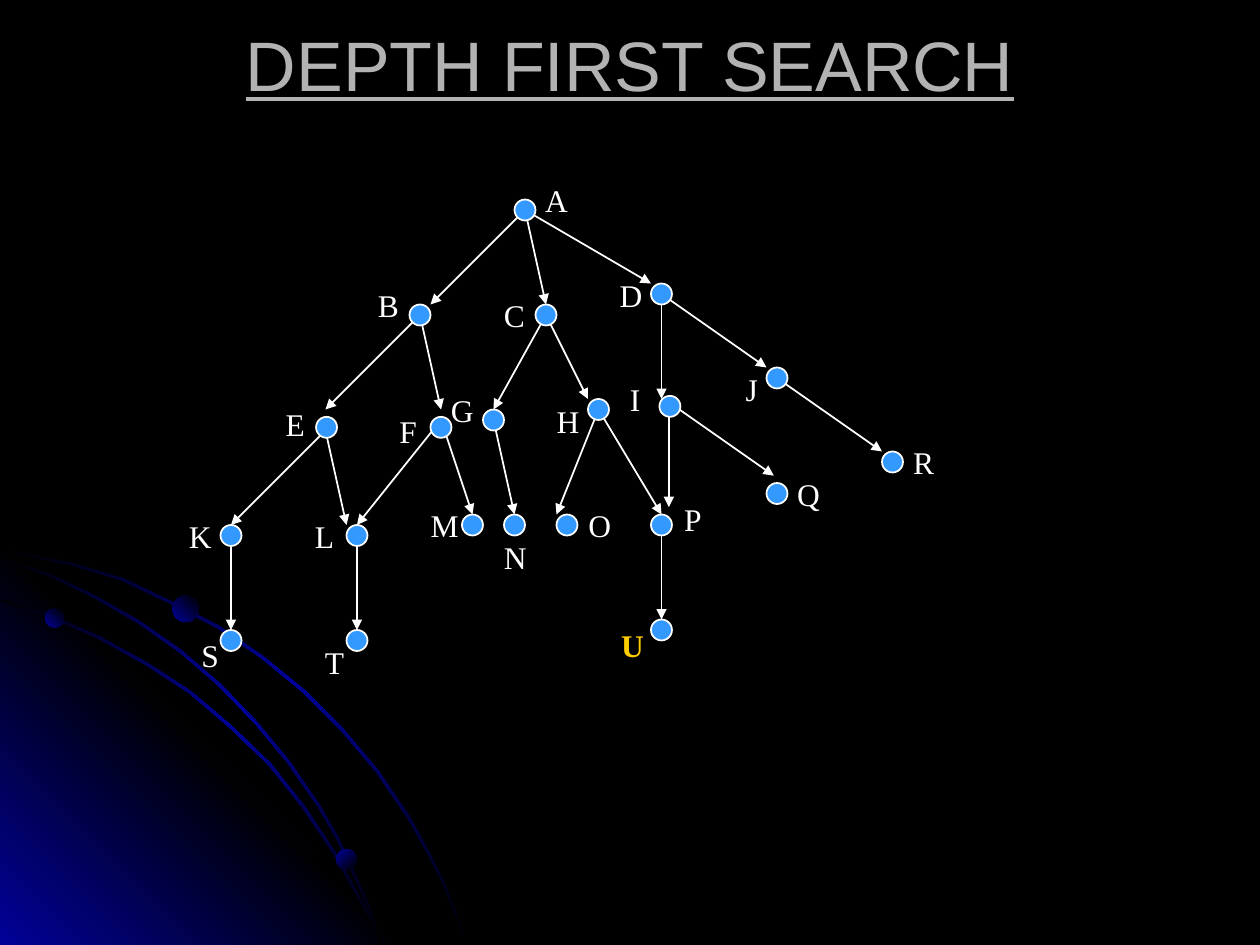
from copy import deepcopy

from lxml.etree import SubElement
from pptx import Presentation
from pptx.dml.color import RGBColor
from pptx.enum.shapes import MSO_CONNECTOR, MSO_SHAPE
from pptx.enum.text import MSO_ANCHOR, MSO_AUTO_SIZE, PP_ALIGN
from pptx.oxml.ns import qn
from pptx.util import Cm, Pt

BLACK, WHITE, BLUE = "000000", "FFFFFF", "010199"
NODE_BLUE, GOAL_GOLD, TITLE_GREY = "3399FF", "FFCC00", "B2B2B2"
GRID = 2.54 / 12  # the tree sits on a grid of twelfths of an inch
NODE_SIZE = 2 * GRID
SLIDE_HEIGHT = 19.05
ARC_WIDTH = 0.04

# Outer edges of the background arcs, in cm
OUTER_ARC = [(0, 11.05), (0.71, 11.2), (1.45, 11.35), (2.49, 11.66), (3.45, 12.12),
             (4.42, 12.62), (5.31, 13.23), (6.15, 13.92), (6.91, 14.68), (7.62, 15.52),
             (8.26, 16.46), (8.61, 17.09), (8.94, 17.73), (9.19, 18.36), (9.45, 19.02)]
INNER_ARC = [(0, 12.07), (1.04, 12.4), (2.01, 12.83), (2.97, 13.36), (3.86, 13.94),
             (4.67, 14.63), (5.46, 15.39), (6.15, 16.26), (6.76, 17.17), (7.26, 18.08),
             (7.52, 18.54), (7.7, 19.02)]
MIDDLE_ARC = [(0, 11.23), (0.99, 11.56), (1.93, 12.01), (2.82, 12.52), (3.66, 13.11),
              (4.45, 13.79), (5.18, 14.55), (5.82, 15.32), (6.45, 16.23), (6.83, 16.89),
              (7.16, 17.6), (7.47, 18.29), (7.7, 19.02)]
CORNER_GLOW = [(0, 10.85), (8.18, SLIDE_HEIGHT), (0, SLIDE_HEIGHT)]

# Background planets: left, top, size in cm, gradient angle
PLANETS = [(0.91, 12.27, 0.38, 45), (6.78, 17.12, 0.41, 315), (3.48, 12.01, 0.53, 45)]

# Node: centre on the grid, then left, top and width of its label in cm
NODES = {
    "A": (50, 20, 10.74, 3.53, 0.94),
    "B": (40, 30, 7.37, 5.64, 0.91),
    "C": (52, 30, 9.91, 5.84, 0.91),
    "D": (63, 28, 12.24, 5.44, 0.99),
    "E": (31.1, 40.7, 5.51, 8.05, 0.94),
    "F": (42, 40.7, 7.8, 8.18, 0.86),
    "G": (47, 40, 8.84, 7.75, 0.99),
    "H": (57, 39, 10.97, 7.98, 0.99),
    "I": (63.8, 38.7, 12.45, 7.54, 0.74),
    "J": (74, 36, 14.78, 7.34, 0.71),
    "K": (22, 51, 3.56, 10.29, 0.99),
    "L": (34, 51, 6.1, 10.29, 0.86),
    "M": (45, 50, 8.43, 10.08, 1.04),
    "N": (49, 50, 9.91, 10.72, 0.99),
    "O": (54, 50, 11.61, 10.08, 1.02),
    "P": (63, 50, 13.54, 9.96, 0.86),
    "Q": (74, 47, 15.82, 9.45, 0.99),
    "R": (85, 44, 18.16, 8.81, 0.91),
    "S": (22, 61, 3.81, 12.7, 0.81),
    "T": (34, 61, 6.3, 12.83, 0.91),
    "U": (63, 60, 12.27, 12.5, 0.99),
}
GOAL = "U"

# Branches: start on the grid, then the arrow tips
BRANCHES = [
    ((50, 20), [(41, 29), (52, 29), (62, 27)]),
    ((40, 30), [(31, 39), (42, 39)]),
    ((52, 30), [(47, 39), (56, 38)]),
    ((31, 41), [(22, 50), (33, 50)]),
    ((42, 40), [(34, 50), (45, 49)]),
    ((57, 39), [(53, 49), (63, 49)]),
    ((47, 40), [(49, 49)]),
    ((34, 51), [(34, 60)]),
    ((22, 51), [(22, 60)]),
    ((63, 28), [(63, 38), (73, 35)]),
    ((63.7, 38.3), [(63.7, 48.3), (73.7, 45.3)]),
    ((74, 36), [(84, 43)]),
    ((63, 50), [(63, 59)]),
]


def color(hex_value):
    return RGBColor.from_string(hex_value)


def paint_gradient(shape, colors, angle):
    """Spread the colours evenly along a counter-clockwise angle."""
    shape.shadow.inherit = False
    shape.line.fill.background()
    fill = shape.fill
    fill.gradient()
    fill.gradient_angle = angle
    stops = shape._element.spPr.find(".//" + qn("a:gsLst"))
    while len(stops) < len(colors):
        stops.append(deepcopy(stops[0]))
    for index, (stop, hex_value) in enumerate(zip(fill.gradient_stops, colors)):
        stop.position = index / (len(colors) - 1)
        stop.color.rgb = color(hex_value)


def add_outline(slide, points, colors, angle):
    corners = [(Cm(x), Cm(y)) for x, y in points]
    builder = slide.shapes.build_freeform(*corners[0])
    builder.add_line_segments(corners[1:], close=True)
    paint_gradient(builder.convert_to_shape(), colors, angle)


def add_arc(slide, outer_edge):
    inner_edge = [(max(x - ARC_WIDTH, 0), min(y + ARC_WIDTH, SLIDE_HEIGHT))
                  for x, y in reversed(outer_edge)]
    add_outline(slide, outer_edge + inner_edge, [BLACK, BLUE, BLACK], 315)


def add_planet(slide, left, top, size, angle):
    planet = slide.shapes.add_shape(MSO_SHAPE.OVAL, Cm(left), Cm(top), Cm(size), Cm(size))
    paint_gradient(planet, [BLUE, BLACK], angle)


def add_arrow(slide, start, tip):
    ends = [Cm(value * GRID) for value in start + tip]
    arrow = slide.shapes.add_connector(MSO_CONNECTOR.STRAIGHT, *ends)
    arrow.line.color.rgb = color(WHITE)
    arrow.line.width = Pt(1)
    properties = arrow._element.spPr
    SubElement(properties.find(qn("a:ln")), qn("a:tailEnd"), type="triangle")
    SubElement(properties, qn("a:effectLst"))


def add_node(slide, x, y):
    node = slide.shapes.add_shape(MSO_SHAPE.OVAL, Cm((x - 1) * GRID), Cm((y - 1) * GRID),
                                  Cm(NODE_SIZE), Cm(NODE_SIZE))
    node.shadow.inherit = False
    node.fill.solid()
    node.fill.fore_color.rgb = color(NODE_BLUE)
    node.line.color.rgb = color(WHITE)
    node.line.width = Pt(1)


def add_label(slide, letter, left, top, width):
    label = slide.shapes.add_textbox(Cm(left), Cm(top), Cm(width), Cm(1.02)).text_frame
    label.word_wrap = False
    label.auto_size = MSO_AUTO_SIZE.SHAPE_TO_FIT_TEXT
    label.text = letter
    font = label.paragraphs[0].font
    font.name, font.size = "Times New Roman", Pt(18)
    font.color.rgb = color(GOAL_GOLD if letter == GOAL else WHITE)
    if letter == GOAL:
        font.bold = True


def set_title(slide, heading):
    title = slide.shapes.title
    title.left, title.top, title.width, title.height = Cm(1.9), Cm(0.64), Cm(21.6), Cm(1.27)
    frame = title.text_frame
    frame.text = heading
    frame.auto_size = MSO_AUTO_SIZE.NONE
    frame.vertical_anchor = MSO_ANCHOR.MIDDLE
    paragraph = frame.paragraphs[0]
    paragraph.alignment = PP_ALIGN.CENTER
    font = paragraph.font
    font.name, font.size, font.underline = "Arial", Pt(40), True
    font.color.rgb = color(TITLE_GREY)


def main():
    deck = Presentation()
    deck.slide_width, deck.slide_height = Cm(25.4), Cm(SLIDE_HEIGHT)
    slide = deck.slides.add_slide(deck.slide_layouts[5])

    # Background
    slide.background.fill.solid()
    slide.background.fill.fore_color.rgb = color(BLACK)
    add_arc(slide, OUTER_ARC)
    add_outline(slide, CORNER_GLOW, [BLUE, BLACK, BLUE], 45)
    add_arc(slide, INNER_ARC)
    add_arc(slide, MIDDLE_ARC)
    for planet in PLANETS:
        add_planet(slide, *planet)

    # Search tree
    for start, tips in BRANCHES:
        for tip in tips:
            add_arrow(slide, start, tip)
    for x, y, *_ in NODES.values():
        add_node(slide, x, y)
    for letter, (_, _, *place) in NODES.items():
        add_label(slide, letter, *place)

    set_title(slide, "DEPTH FIRST SEARCH")
    deck.save("out.pptx")


if __name__ == "__main__":
    main()
